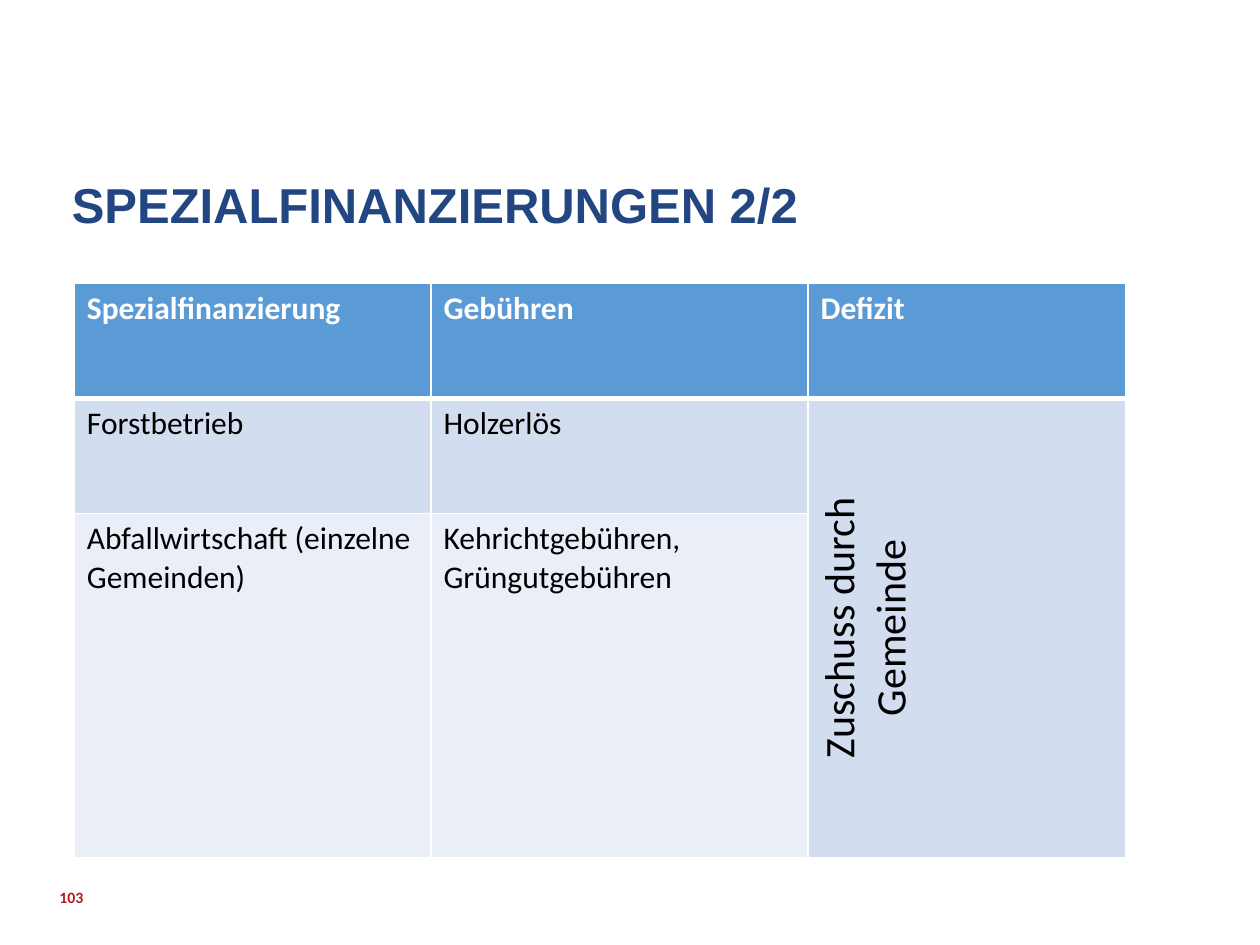
from dataclasses import dataclass

from lxml import etree
from pptx import Presentation
from pptx.dml.color import RGBColor
from pptx.enum.text import MSO_ANCHOR, PP_ALIGN
from pptx.oxml.ns import qn
from pptx.util import Pt

TOP, MIDDLE = MSO_ANCHOR.TOP, MSO_ANCHOR.MIDDLE
CENTER = PP_ALIGN.CENTER


@dataclass(frozen=True)
class TextStyle:
    font: str
    size: float
    color: str
    bold: bool = False


@dataclass(frozen=True)
class Theme:
    title: TextStyle = TextStyle("Arial", 28, "224681", True)
    header: TextStyle = TextStyle("Calibri", 18, "FFFFFF", True)
    body: TextStyle = TextStyle("Calibri", 18, "000000")
    subsidy: TextStyle = TextStyle("Calibri", 24, "000000")
    page_number: TextStyle = TextStyle("Calibri", 9, "B21D24", True)
    row_fills: tuple[str, ...] = ("5B9BD5", "D2DEEF", "EAEFF7")
    border: str = "FFFFFF"


@dataclass(frozen=True)
class Label:
    text: str
    left: float
    top: float
    width: float
    height: float
    style: TextStyle
    anchor: MSO_ANCHOR
    margins: tuple[float, float]
    line_spacing: float = 1.0


THEME = Theme()
LABELS = [
    Label("SPEZIALFINANZIERUNGEN 2/2", 34, 100, 550, 67.5, THEME.title, TOP, (7.2, 3.6), 0.9),
    Label("103", 34, 498.5, 162, 28.5, THEME.page_number, MIDDLE, (0, 0)),
]
ROWS = [
    ("Spezialfinanzierung", "Gebühren", "Defizit"),
    ("Forstbetrieb", "Holzerlös", "Zuschuss durch Gemeinde"),
    ("Abfallwirtschaft (einzelne Gemeinden)", "Kehrichtgebühren, Grüngutgebühren", ""),
]
COLUMN_WIDTHS = (203.8, 215.5, 181.7)
ROW_HEIGHT = 65.7
TABLE_LEFT, TABLE_TOP = 42.5, 162


def format_text(frame, style: TextStyle) -> None:
    for para in frame.paragraphs:
        for span in para.runs:
            span.font.name = style.font
            span.font.size = Pt(style.size)
            span.font.bold = style.bold
            span.font.color.rgb = RGBColor.from_string(style.color)


def add_label(page, label: Label) -> None:
    box = page.shapes.add_textbox(
        Pt(label.left), Pt(label.top), Pt(label.width), Pt(label.height))
    frame = box.text_frame
    frame.word_wrap = True
    frame.vertical_anchor = label.anchor
    side, edge = label.margins
    frame.margin_left = frame.margin_right = Pt(side)
    frame.margin_top = frame.margin_bottom = Pt(edge)
    frame.text = label.text
    frame.paragraphs[0].line_spacing = label.line_spacing
    format_text(frame, label.style)


def add_borders(cell, bottom_width: float) -> None:
    """Draw all four cell edges, the bottom one with its own width."""
    properties = cell._tc.get_or_add_tcPr()
    for edge, width in (("L", 1), ("R", 1), ("T", 1), ("B", bottom_width)):
        line = etree.SubElement(properties, qn(f"a:ln{edge}"), w=str(Pt(width)))
        fill = etree.SubElement(line, qn("a:solidFill"))
        etree.SubElement(fill, qn("a:srgbClr"), val=THEME.border)


def add_funding_table(page) -> None:
    table = page.shapes.add_table(
        len(ROWS), len(COLUMN_WIDTHS), Pt(TABLE_LEFT), Pt(TABLE_TOP),
        Pt(sum(COLUMN_WIDTHS)), Pt(ROW_HEIGHT * len(ROWS))).table
    table.first_row = table.horz_banding = False
    for column, width in zip(table.columns, COLUMN_WIDTHS):
        column.width = Pt(width)

    for row_index, texts in enumerate(ROWS):
        table.rows[row_index].height = Pt(ROW_HEIGHT)
        is_header = row_index == 0
        for column_index, text in enumerate(texts):
            cell = table.cell(row_index, column_index)
            cell.text_frame.text = text
            format_text(cell.text_frame, THEME.header if is_header else THEME.body)
            # The header is set off by a heavier rule; the row below shares that edge.
            add_borders(cell, 3 if is_header else 1)
            if row_index == 1:
                cell._tc.tcPr.find(qn("a:lnT")).set("w", str(Pt(3)))
            cell.fill.solid()
            cell.fill.fore_color.rgb = RGBColor.from_string(THEME.row_fills[row_index])

    subsidy = table.cell(1, 2)
    subsidy.merge(table.cell(2, 2))
    subsidy.vertical_anchor = MIDDLE
    subsidy._tc.tcPr.set("vert", "vert270")
    subsidy.text_frame.paragraphs[0].alignment = CENTER
    format_text(subsidy.text_frame, THEME.subsidy)


def main() -> None:
    deck = Presentation()
    deck.slide_width, deck.slide_height = Pt(720), Pt(540)
    page = deck.slides.add_slide(deck.slide_layouts[6])
    add_funding_table(page)
    for label in LABELS:
        add_label(page, label)
    deck.save("out.pptx")


if __name__ == "__main__":
    main()
